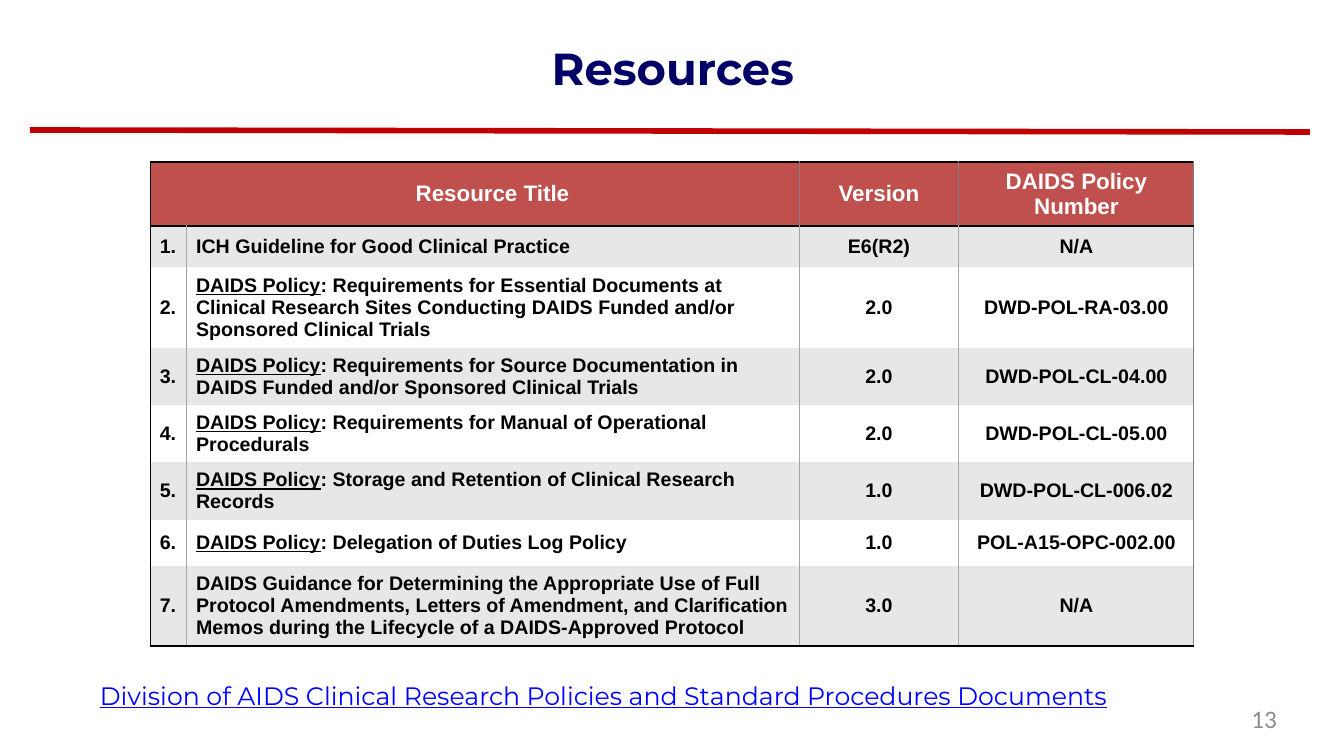
from lxml.etree import SubElement
from pptx import Presentation
from pptx.dml.color import RGBColor
from pptx.enum.shapes import MSO_CONNECTOR as CONN
from pptx.enum.text import MSO_ANCHOR as ANCHOR, PP_ALIGN as ALIGN
from pptx.oxml.ns import qn
from pptx.util import Pt

PX = 914400 / 100.8
NAVY = RGBColor(0x00, 0x00, 0x66)
RED = RGBColor(0xC0, 0x00, 0x00)
BRICK = RGBColor(0xC0, 0x50, 0x4D)
BAND = RGBColor(0xE7, 0xE7, 0xE7)
WHITE = RGBColor(0xFF, 0xFF, 0xFF)
BLACK = RGBColor(0x00, 0x00, 0x00)
BLUE = RGBColor(0x00, 0x00, 0xFF)
NUMBER_GRAY = RGBColor(0x8C, 0x8C, 0x8C)
EDGE_GRAY = RGBColor(0x80, 0x80, 0x80)
RULE_GRAY = RGBColor(0xA6, 0xA6, 0xA6)

TITLE = dict(name="Montserrat", size=Pt(32), bold=True, color=NAVY)
LINK = dict(name="Montserrat", size=Pt(18), underline=True, color=BLUE)
NUMBER = dict(name="Calibri", size=Pt(18), color=NUMBER_GRAY)
HEAD = dict(name="Arial", size=Pt(16), bold=True, color=WHITE)
BODY = dict(HEAD, size=Pt(14), color=BLACK)

NO_STYLE = "{2D5ABB26-0587-4C30-8999-92F81FD0307C}"
THIN, THICK = 0.75, 2
COL_WIDTHS = [36, 613, 160, 235]
ROW_HEIGHTS = [64, 41, 81, 57, 57, 57, 46, 80]
HEADINGS = ["", "Resource Title", "Version", "DAIDS Policy Number"]
POLICY = "DAIDS Policy"
RESOURCES = [
    ("ICH Guideline for Good Clinical Practice", "E6(R2)", "N/A"),
    ("DAIDS Policy: Requirements for Essential Documents at Clinical Research "
     "Sites Conducting DAIDS Funded and/or Sponsored Clinical Trials",
     "2.0", "DWD-POL-RA-03.00"),
    ("DAIDS Policy: Requirements for Source Documentation in DAIDS Funded "
     "and/or Sponsored Clinical Trials", "2.0", "DWD-POL-CL-04.00"),
    ("DAIDS Policy: Requirements for Manual of Operational Procedurals",
     "2.0", "DWD-POL-CL-05.00"),
    ("DAIDS Policy: Storage and Retention of Clinical Research Records",
     "1.0", "DWD-POL-CL-006.02"),
    ("DAIDS Policy: Delegation of Duties Log Policy",
     "1.0", "POL-A15-OPC-002.00"),
    ("DAIDS Guidance for Determining the Appropriate Use of Full Protocol "
     "Amendments, Letters of Amendment, and Clarification Memos during the "
     "Lifecycle of a DAIDS-Approved Protocol", "3.0", "N/A"),
]


def px(*lengths):
    """Turn px lengths into EMU."""
    return [round(n * PX) for n in lengths]


def add_run(p, text, fmt):
    """Add a run with the given font values."""
    r = p.add_run()
    r.text = text
    for key, value in fmt.items():
        if key == "color":
            r.font.color.rgb = value
        else:
            setattr(r.font, key, value)


def write(tf, text, fmt, align, **frame):
    """Fill a text frame with one paragraph and format the frame."""
    for key, value in frame.items():
        setattr(tf, key, value)
    p = tf.paragraphs[0]
    p.alignment = align
    add_run(p, text, fmt)


def add_title(slide, box, text):
    """Move the title placeholder to its box and fill it."""
    sp = slide.shapes.title
    sp.left, sp.top, sp.width, sp.height = px(*box)
    write(sp.text_frame, text, TITLE, ALIGN.CENTER, word_wrap=False,
          vertical_anchor=ANCHOR.MIDDLE, margin_left=0, margin_right=0,
          margin_top=0, margin_bottom=0)


def add_text(slide, box, text, fmt, align, **frame):
    """Add a one-line text box."""
    sp = slide.shapes.add_textbox(*px(*box))
    write(sp.text_frame, text, fmt, align, **frame)


def add_rule(slide, ends):
    """Add the red line under the title."""
    line = slide.shapes.add_connector(CONN.STRAIGHT, *px(*ends))
    line.line.color.rgb = RED
    line.line.width = Pt(4)
    SubElement(line._element.spPr, qn("a:effectLst"))


def set_borders(cell, borders):
    """Draw the cell sides that are given and blank the others."""
    tcPr = cell._tc.get_or_add_tcPr()
    for side in "LRTB":
        color, width = borders.get(side, (None, 0))
        ln = SubElement(tcPr, qn("a:ln" + side), w=str(Pt(width)))
        if color is None:
            SubElement(ln, qn("a:noFill"))
        else:
            fill = SubElement(ln, qn("a:solidFill"))
            SubElement(fill, qn("a:srgbClr"), val=str(color))


def cell_borders(row, col):
    """Work out the borders of a cell from its place in the table."""
    last_col = len(COL_WIDTHS) - 1
    inner = RULE_GRAY if row else EDGE_GRAY
    borders = {"L": (inner if col else BLACK, THIN),
               "R": (EDGE_GRAY if col == last_col else inner, THIN)}
    if row == 0:
        borders.update(T=(BLACK, THICK), B=(BLACK, THICK))
        borders.pop({0: "R", 1: "L"}.get(col), None)
    elif row == 1:
        borders["T"] = (BLACK, THICK)
    elif row == len(RESOURCES):
        borders["B"] = (BLACK, THICK)
    return borders


def fill_cell(cell, row, col, text):
    """Set the borders, fill and text of one cell."""
    set_borders(cell, cell_borders(row, col))
    cell.fill.solid()
    cell.fill.fore_color.rgb = (WHITE, BAND)[row % 2] if row else BRICK
    cell.vertical_anchor = ANCHOR.MIDDLE
    if col == 0:
        cell.margin_left = cell.margin_right = 0
    p = cell.text_frame.paragraphs[0]
    p.alignment = ALIGN.LEFT if row and col == 1 else ALIGN.CENTER
    fmt = BODY if row else HEAD
    if text.startswith(POLICY + ":"):
        add_run(p, POLICY, dict(fmt, underline=True))
        text = text.removeprefix(POLICY)
    if text:
        add_run(p, text, fmt)


def add_resources(slide, left, top):
    """Add the table of numbered resources."""
    rows = [HEADINGS] + [(f"{n}.", *item) for n, item in enumerate(RESOURCES, 1)]
    box = px(left, top, sum(COL_WIDTHS), sum(ROW_HEIGHTS))
    table = slide.shapes.add_table(len(rows), len(COL_WIDTHS), *box).table
    table.first_row = table.horz_banding = False
    table._tbl.tblPr.find(qn("a:tableStyleId")).text = NO_STYLE
    for column, width in zip(table.columns, px(*COL_WIDTHS)):
        column.width = width
    for row, height in zip(table.rows, px(*ROW_HEIGHTS)):
        row.height = height
    for i, row in enumerate(rows):
        for j, text in enumerate(row):
            fill_cell(table.cell(i, j), i, j, text)


def main():
    """Build the slide and save it."""
    prs = Presentation()
    prs.slide_width, prs.slide_height = px(1344, 756)
    slide = prs.slides.add_slide(prs.slide_layouts[5])
    add_title(slide, (541, 41, 264, 54), "Resources")
    add_text(slide, (968, 703, 309, 38), "13", NUMBER, ALIGN.RIGHT,
             word_wrap=True, margin_left=0, margin_right=0, margin_top=0,
             margin_bottom=0)
    add_resources(slide, 150, 162)
    add_text(slide, (90, 675, 1142, 40),
             "Division of AIDS Clinical Research Policies and Standard "
             "Procedures Documents", LINK, ALIGN.LEFT, word_wrap=False)
    add_rule(slide, (30, 130, 1310, 132))
    prs.save("out.pptx")


if __name__ == "__main__":
    main()
